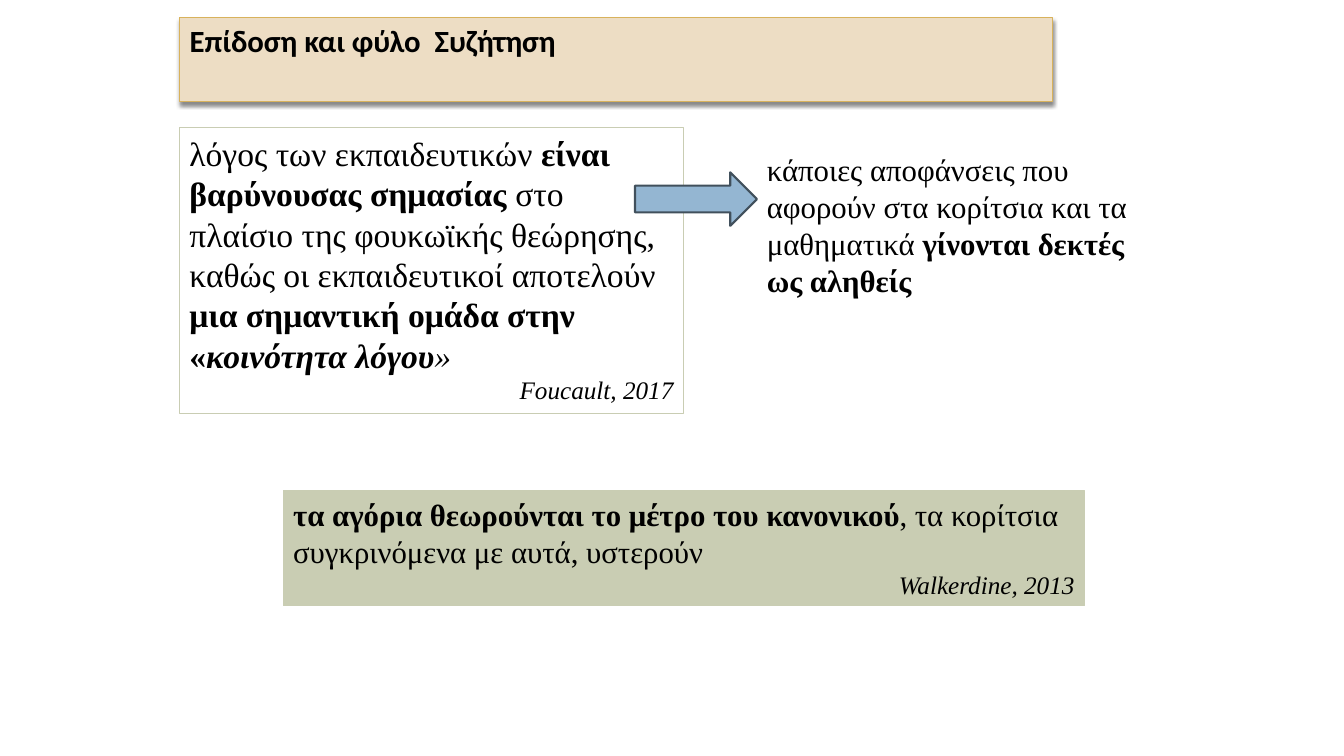
"""Build the slide on teachers' discourse, achievement and gender."""

from dataclasses import dataclass
from typing import Optional

from lxml.etree import SubElement
from pptx import Presentation
from pptx.dml.color import RGBColor
from pptx.enum.shapes import MSO_SHAPE
from pptx.enum.text import MSO_ANCHOR, MSO_AUTO_SIZE, PP_ALIGN
from pptx.oxml.ns import qn
from pptx.shapes.base import BaseShape
from pptx.util import Pt


@dataclass(frozen=True)
class Theme:
    black: str = "000000"
    sand: str = "EDDDC4"
    gold: str = "D8B25C"
    sage: str = "C9CDB3"
    blue: str = "94B6D2"
    slate: str = "41505C"
    heading_font: str = "Calibri"
    body_font: str = "Times New Roman"
    large: float = 24
    medium: float = 22
    small: float = 18


THEME = Theme()


@dataclass(frozen=True)
class Run:
    text: str
    bold: bool = False
    italic: bool = False


@dataclass(frozen=True)
class Line:
    runs: tuple[Run, ...]
    size: float = THEME.medium
    alignment: PP_ALIGN = PP_ALIGN.LEFT
    font: str = THEME.body_font


@dataclass(frozen=True)
class Panel:
    left: float
    top: float
    width: float
    height: float
    lines: tuple[Line, ...] = ()
    fill: Optional[str] = None
    outline: Optional[str] = None
    outline_width: float = 0.75
    preset: MSO_SHAPE = MSO_SHAPE.RECTANGLE


def citation(text: str) -> Line:
    """Return a right-aligned source line."""
    return Line((Run(text, italic=True),), THEME.small, PP_ALIGN.RIGHT)


HEADING = Panel(
    128.2, 12.2, 623.5, 33.8,
    (Line((Run("Επίδοση και φύλο  Συζήτηση", bold=True),), font=THEME.heading_font),),
    THEME.sand, THEME.gold, 0.79,
)
DISCOURSE = Panel(
    128.2, 91.4, 360, 203.8,
    (
        Line((
            Run("λόγος των εκπαιδευτικών "),
            Run("είναι βαρύνουσας σημασίας ", bold=True),
            Run("στο πλαίσιο της φουκωϊκής θεώρησης, καθώς οι εκπαιδευτικοί αποτελούν "),
            Run("μια σημαντική ομάδα στην «", bold=True),
            Run("κοινότητα λόγου", bold=True, italic=True),
            Run("»", italic=True),
        ), THEME.large),
        citation("Foucault, 2017"),
    ),
    outline=THEME.sage,
)
STATEMENTS = Panel(
    540.7, 104.4, 278.6, 113.8,
    (Line((
        Run("κάποιες αποφάνσεις που αφορούν στα κορίτσια και τα μαθηματικά "),
        Run("γίνονται δεκτές ως αληθείς", bold=True),
    )),),
)
ARROW = Panel(
    453.6, 123.1, 87.1, 38.2,
    fill=THEME.blue, outline=THEME.slate, outline_width=1.5,
    preset=MSO_SHAPE.RIGHT_ARROW,
)
NORM = Panel(
    202.3, 350.6, 572.4, 82.1,
    (
        Line((
            Run("τα αγόρια θεωρούνται το μέτρο του κανονικού", bold=True),
            Run(", τα κορίτσια συγκρινόμενα με αυτά, υστερούν"),
        )),
        citation("Walkerdine, 2013"),
    ),
    THEME.sage, THEME.sage,
)


def write_lines(shape: BaseShape, lines: tuple[Line, ...]) -> None:
    """Fill the shape's text frame with formatted lines."""
    frame = shape.text_frame
    frame_format = {
        "word_wrap": True,
        "auto_size": MSO_AUTO_SIZE.SHAPE_TO_FIT_TEXT,
        "vertical_anchor": MSO_ANCHOR.TOP,
    }
    for name, value in frame_format.items():
        setattr(frame, name, value)
    for index, line in enumerate(lines):
        paragraph = frame.add_paragraph() if index else frame.paragraphs[0]
        paragraph.alignment = line.alignment
        for part in line.runs:
            run = paragraph.add_run()
            run.text = part.text
            run.font.color.rgb = RGBColor.from_string(THEME.black)
            font_format = {
                "name": line.font,
                "size": Pt(line.size),
                "bold": part.bold,
                "italic": part.italic,
            }
            for name, value in font_format.items():
                setattr(run.font, name, value)


def format_panel(shape: BaseShape, panel: Panel) -> None:
    """Apply the panel's place, colours and text to a shape."""
    for name in ("left", "top", "width", "height"):
        setattr(shape, name, Pt(getattr(panel, name)))
    if panel.fill:
        shape.fill.solid()
        shape.fill.fore_color.rgb = RGBColor.from_string(panel.fill)
    else:
        shape.fill.background()
    if panel.outline:
        shape.line.color.rgb = RGBColor.from_string(panel.outline)
        shape.line.width = Pt(panel.outline_width)
    if panel.lines:
        write_lines(shape, panel.lines)


def draw_panel(shapes, panel: Panel) -> None:
    """Add a panel as a preset shape, or as a text box if it is plain text."""
    place = [Pt(value) for value in (panel.left, panel.top, panel.width, panel.height)]
    if panel.fill or panel.outline:
        shape = shapes.add_shape(panel.preset, *place)
        shape.shadow.inherit = False
    else:
        shape = shapes.add_textbox(*place)
    format_panel(shape, panel)


def add_drop_shadow(shape: BaseShape) -> None:
    """Give the shape a soft shadow below it."""
    properties = shape._element.spPr
    effects = SubElement(properties, qn("a:effectLst"))
    shadow = SubElement(
        effects, qn("a:outerShdw"),
        blurRad=str(Pt(3)), dist=str(Pt(2.4)), dir="5400000", rotWithShape="0",
    )
    color = SubElement(shadow, qn("a:srgbClr"), val=THEME.black)
    SubElement(color, qn("a:alpha"), val="45000")


def main() -> None:
    """Build and save the presentation."""
    presentation = Presentation()
    presentation.slide_width, presentation.slide_height = Pt(960), Pt(540)
    slide = presentation.slides.add_slide(presentation.slide_layouts[5])
    format_panel(slide.shapes.title, HEADING)
    add_drop_shadow(slide.shapes.title)
    draw_panel(slide.shapes, DISCOURSE)
    consequence = slide.shapes.add_group_shape()
    for panel in (STATEMENTS, ARROW):
        draw_panel(consequence.shapes, panel)
    draw_panel(slide.shapes, NORM)
    presentation.save("out.pptx")


if __name__ == "__main__":
    main()
